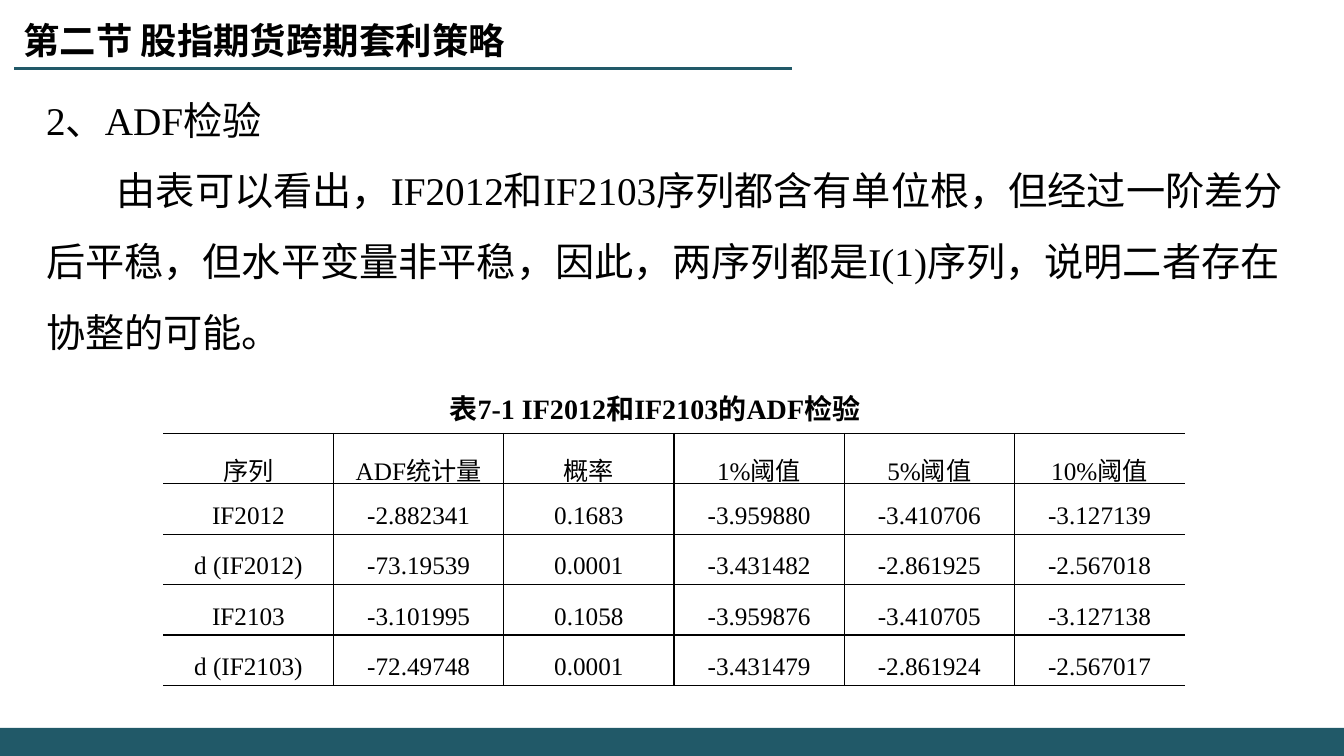
from lxml import etree
from pptx import Presentation
from pptx.dml.color import RGBColor
from pptx.enum import shapes, text
from pptx.oxml import ns
from pptx.util import Inches, Pt

LATIN, CJK = "Times New Roman", "Noto Sans CJK SC"
BLACK, TEAL = "000000", "215968"

ADF_ROWS = [
    ["序列", "ADF统计量", "概率", "1%阈值", "5%阈值", "10%阈值"],
    ["IF2012", "-2.882341", "0.1683", "-3.959880", "-3.410706", "-3.127139"],
    ["d (IF2012)", "-73.19539", "0.0001", "-3.431482", "-2.861925", "-2.567018"],
    ["IF2103", "-3.101995", "0.1058", "-3.959876", "-3.410705", "-3.127138"],
    ["d (IF2103)", "-72.49748", "0.0001", "-3.431479", "-2.861924", "-2.567017"],
]


def color(value):
    return RGBColor.from_string(value)


def add_run(p, words, size, font=LATIN, bold=False):
    r = p.add_run()
    r.text = words
    r.font.size = Pt(size)
    r.font.name = font
    r.font.bold = bold
    r.font.color.rgb = color(BLACK)
    ea = etree.SubElement(r.font._element, ns.qn("a:ea"))
    ea.set("typeface", CJK)


def set_title(slide, words):
    sp = slide.shapes.title
    sp.left, sp.top = Inches(0.13), Inches(0.13)
    sp.width, sp.height = Inches(6.11), Inches(0.54)
    tf = sp.text_frame
    tf.word_wrap = True
    tf.auto_size = text.MSO_AUTO_SIZE.NONE
    tf.vertical_anchor = text.MSO_ANCHOR.TOP
    p = tf.paragraphs[0]
    p.alignment = text.PP_ALIGN.LEFT
    p.line_spacing = 1.0
    p.space_before = Pt(0)
    add_run(p, words, 26, CJK, True)


def add_text(slide, box, paragraphs, size, bold=False):
    """Each paragraph is a pair: words, first-line indent in inches."""
    tf = slide.shapes.add_textbox(*map(Inches, box)).text_frame
    tf.word_wrap = True
    for i, (words, indent) in enumerate(paragraphs):
        p = tf.paragraphs[0] if i == 0 else tf.add_paragraph()
        p.line_spacing = 1.5
        if indent:
            p._p.get_or_add_pPr().set("indent", str(Inches(indent)))
        add_run(p, words, size, bold=bold)


def add_bar(slide, box):
    s = slide.shapes.add_shape(shapes.MSO_SHAPE.RECTANGLE, *map(Inches, box))
    s.shadow.inherit = False
    s.fill.solid()
    s.fill.fore_color.rgb = color(TEAL)
    s.line.fill.background()


def add_rule(slide, x1, x2, y):
    line = slide.shapes.add_connector(
        shapes.MSO_CONNECTOR.STRAIGHT, Inches(x1), Inches(y), Inches(x2), Inches(y))
    line.line.color.rgb = color(TEAL)
    line.line.width = Pt(1.5)
    etree.SubElement(line._element.spPr, ns.qn("a:effectLst"))


def set_border(cell, side, visible):
    ln = etree.SubElement(cell._tc.get_or_add_tcPr(), ns.qn("a:ln" + side))
    ln.set("w", str(Pt(1)))
    if visible:
        fill = etree.SubElement(ln, ns.qn("a:solidFill"))
        etree.SubElement(fill, ns.qn("a:srgbClr")).set("val", BLACK)
    else:
        etree.SubElement(ln, ns.qn("a:noFill"))


def add_table(slide, left, top, width, row_height, rows):
    n_rows, n_cols = len(rows), len(rows[0])
    table = slide.shapes.add_table(
        n_rows, n_cols, Inches(left), Inches(top),
        Inches(width), Inches(row_height * n_rows)).table
    table.first_row = table.horz_banding = False
    for i, row in enumerate(rows):
        for j, words in enumerate(row):
            cell = table.cell(i, j)
            cell.margin_left = cell.margin_right = Inches(0.07)
            cell.margin_top = cell.margin_bottom = 0
            cell.vertical_anchor = text.MSO_ANCHOR.MIDDLE
            # The table is open on its left and right sides
            for side in "LRTB":
                outer = (side == "L" and j == 0) or (side == "R" and j == n_cols - 1)
                set_border(cell, side, not outer)
            cell.fill.background()
            p = cell.text_frame.paragraphs[0]
            p.alignment = text.PP_ALIGN.CENTER
            p.line_spacing = 1.5
            add_run(p, words, 18)


def main():
    prs = Presentation()
    prs.slide_width, prs.slide_height = Inches(13.33), Inches(7.5)
    slide = prs.slides.add_slide(prs.slide_layouts[5])

    # Frame: footer bar, heading and its rule
    add_bar(slide, (0, 7.22, 13.33, 0.28))
    add_rule(slide, 0.14, 7.86, 0.68)
    set_title(slide, "第二节 股指期货跨期套利策略")

    # Discussion
    add_text(slide, (0.36, 0.67, 12.6, 3), [
        ("2、ADF检验", 0),
        ("由表可以看出，IF2012和IF2103序列都含有单位根，但经过一阶差分后平稳，"
         "但水平变量非平稳，因此，两序列都是I(1)序列，说明二者存在协整的可能。", 0.7),
    ], 28)

    # Test results
    add_text(slide, (4.36, 3.67, 5.35, 0.61),
             [("表7-1 IF2012和IF2103的ADF检验", 0)], 20, bold=True)
    add_table(slide, 1.62, 4.3, 10.13, 0.5, ADF_ROWS)

    prs.save("out.pptx")


if __name__ == "__main__":
    main()
